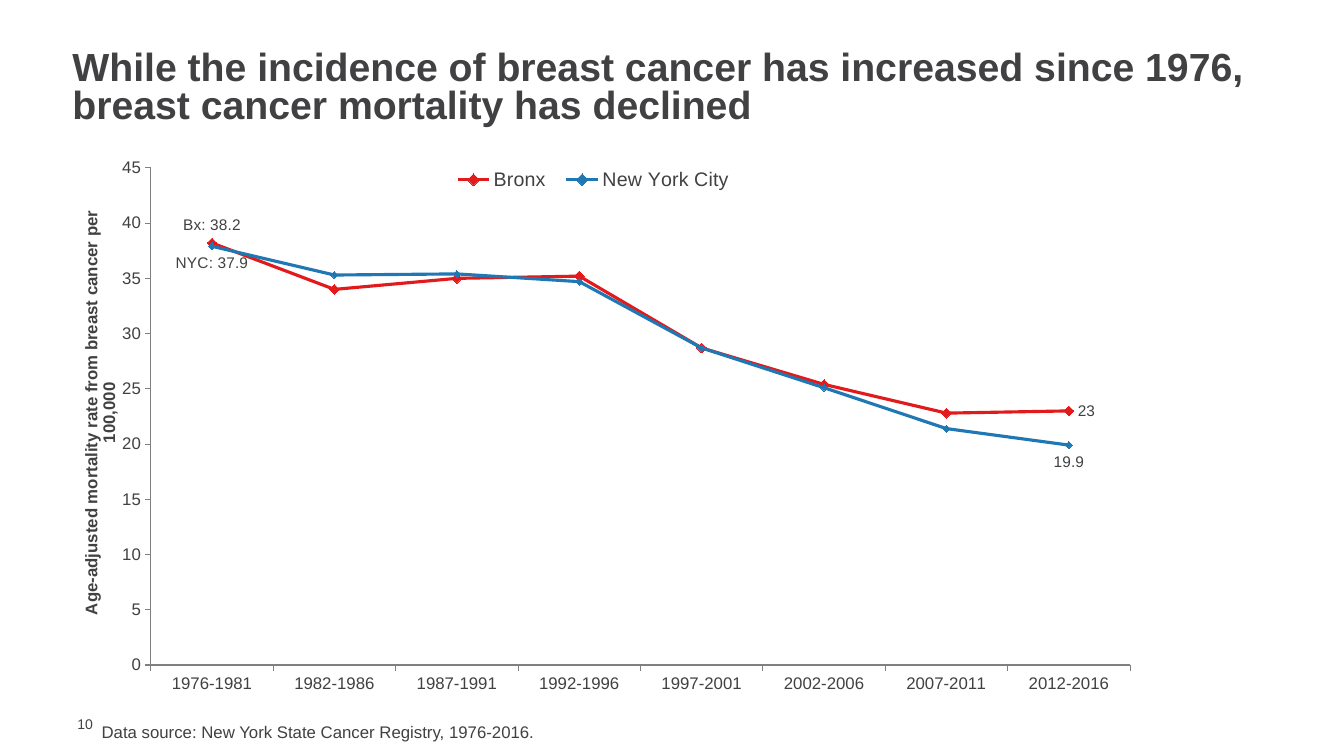
from lxml.etree import SubElement as Sub
from pptx import Presentation
from pptx.chart.data import CategoryChartData as Data
from pptx.dml.color import RGBColor as RGB
from pptx.enum.chart import XL_CHART_TYPE as Kind, XL_LABEL_POSITION as Pos
from pptx.enum.chart import XL_LEGEND_POSITION as Side, XL_MARKER_STYLE as Mark
from pptx.enum.chart import XL_TICK_MARK as Tick
from pptx.enum.text import MSO_ANCHOR as Anchor
from pptx.oxml.ns import qn
from pptx.util import Inches, Pt

COLORS = {"text": "414042", "axis": "808080", "bronx": "E31A1C", "city": "1F78B4"}
FONT = "Arial"
YEARS = ["1976-1981", "1982-1986", "1987-1991", "1992-1996",
         "1997-2001", "2002-2006", "2007-2011", "2012-2016"]
# name, values, colour, marker size, first label, label places (first, last)
LINES = [
    ("Bronx", [38.2, 34, 35, 35.2, 28.7, 25.4, 22.8, 23], "bronx", 7,
     "Bx: 38.2", (Pos.ABOVE, Pos.RIGHT)),
    ("New York City", [37.9, 35.3, 35.4, 34.7, 28.7, 25.1, 21.4, 19.9], "city", 5,
     "NYC: 37.9", (Pos.BELOW, Pos.BELOW)),
]


def tint(name):
    return RGB.from_string(COLORS[name])


def style(font, size, bold=False):
    font.name, font.size, font.bold = FONT, Pt(size), bold
    font.color.rgb = tint("text")


def add_text(slide, text, box, size, bold=False, anchor=Anchor.TOP,
             space=None, pad=None):
    frame = slide.shapes.add_textbox(*map(Inches, box)).text_frame
    frame.word_wrap = True
    frame.vertical_anchor = anchor
    if pad:
        (frame.margin_left, frame.margin_top,
         frame.margin_right, frame.margin_bottom) = map(Inches, pad)
    para = frame.paragraphs[0]
    para.line_spacing = space
    run = para.add_run()
    run.text = text
    style(run.font, size, bold)


def set_place(layout, inner=False, **sizes):
    """Fix a chart part at fractions of the chart's width and height."""
    for old in list(layout):
        layout.remove(old)
    manual = Sub(layout, qn("c:manualLayout"))
    if inner:
        Sub(manual, qn("c:layoutTarget")).set("val", "inner")
    for key in ("x", "y"):
        Sub(manual, qn(f"c:{key}Mode")).set("val", "edge")
    for key, size in sizes.items():
        Sub(manual, qn(f"c:{key}")).set("val", str(size))


def get_layout(part, after=None):
    layout = part.find(qn("c:layout"))
    if layout is None:
        layout = part.makeelement(qn("c:layout"), {})
        if after is None:
            part.insert(0, layout)
        else:
            part.find(qn(after)).addnext(layout)
    return layout


def set_axis(axis):
    axis.has_major_gridlines = False
    axis.major_tick_mark, axis.minor_tick_mark = Tick.OUTSIDE, Tick.NONE
    axis.format.line.color.rgb = tint("axis")
    axis.format.line.width = Pt(0.75)
    style(axis.tick_labels.font, 12)


def set_line(line, color, size, first, places):
    line.smooth = False
    line.format.line.color.rgb = tint(color)
    line.format.line.width = Pt(2.25)
    mark = line.marker
    mark.style, mark.size = Mark.DIAMOND, size
    mark.format.fill.solid()
    mark.format.fill.fore_color.rgb = tint(color)
    mark.format.line.color.rgb = tint(color)

    # Only the first and last points carry labels
    line.data_labels.show_value = False
    start, end = (line.points[i].data_label for i in (0, len(YEARS) - 1))
    run = start.text_frame.paragraphs[0].add_run()
    run.text = first
    style(run.font, 11)
    style(end.font, 11)
    start.position, end.position = places


def add_lines(slide, box):
    data = Data()
    data.categories = YEARS
    for name, vals, *rest in LINES:
        data.add_series(name, vals)
    chart = slide.shapes.add_chart(Kind.LINE_MARKERS, *map(Inches, box), data).chart
    chart.has_title = False
    style(chart.font, 10)

    # Axes
    set_axis(chart.category_axis)
    axis = chart.value_axis
    set_axis(axis)
    axis.minimum_scale, axis.maximum_scale, axis.major_unit = 0, 45, 5
    axis.tick_labels.number_format = "0"
    axis.tick_labels.number_format_is_linked = False
    run = axis.axis_title.text_frame.paragraphs[0].add_run()
    run.text = "Age-adjusted mortality rate from breast cancer per 100,000"
    style(run.font, 12, bold=True)
    title = axis.axis_title._element
    set_place(get_layout(title, after="c:tx"), x=0.04, y=0.09)

    # Legend over the plot
    chart.has_legend = True
    legend = chart.legend
    legend.position, legend.include_in_layout = Side.TOP, False
    style(legend.font, 14)
    set_place(get_layout(legend._element, after="c:legendPos"),
              x=0.37, y=0.01, w=0.27, h=0.06)

    # Plot and series
    area = chart._chartSpace.chart.plotArea
    set_place(get_layout(area), inner=True, x=0.106, y=0.019, w=0.883, h=0.884)
    for line, (name, vals, *look) in zip(chart.plots[0].series, LINES):
        set_line(line, *look)


def main():
    deck = Presentation()
    deck.slide_width, deck.slide_height = Inches(13.33), Inches(7.5)
    slide = deck.slides.add_slide(deck.slide_layouts[6])
    add_text(slide, "10", (0.67, 7.1, 0.43, 0.17), 10, anchor=Anchor.MIDDLE,
             pad=(0.1, 0, 0, 0))
    add_text(slide, "Data source: New York State Cancer Registry, 1976-2016.",
             (0.91, 7.11, 9.92, 0.3), 12)
    add_text(slide, "While the incidence of breast cancer has increased since 1976, "
             "breast cancer mortality has declined",
             (0.62, 0.46, 12.08, 0.85), 28, bold=True, anchor=Anchor.MIDDLE, space=0.8)
    add_lines(slide, (0.33, 1.56, 11, 5.58))
    deck.save("out.pptx")


if __name__ == "__main__":
    main()
